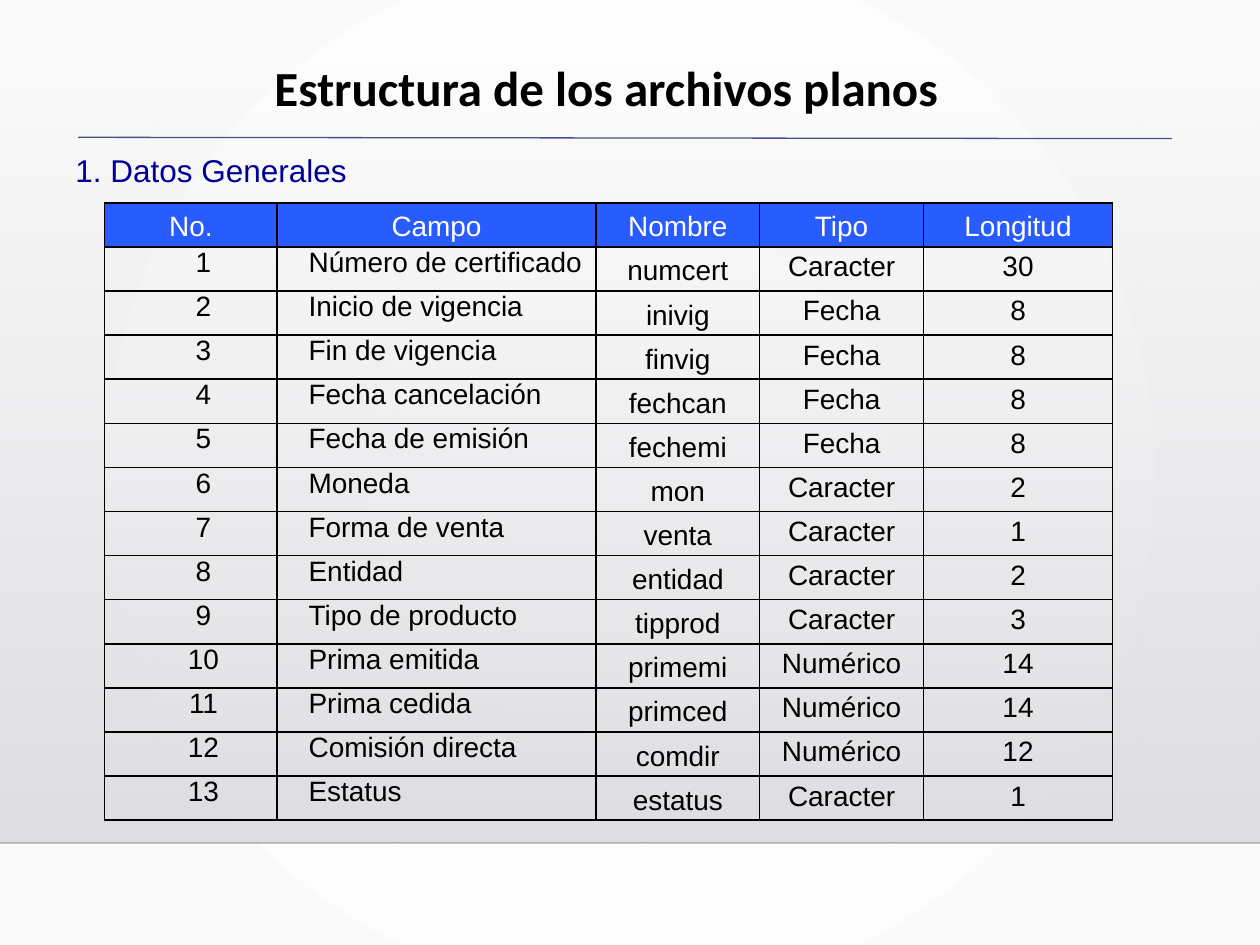
from lxml import etree
from pptx import Presentation
from pptx.dml.color import RGBColor
from pptx.enum.shapes import MSO_CONNECTOR, MSO_SHAPE
from pptx.enum.text import MSO_ANCHOR, MSO_AUTO_SIZE, PP_ALIGN
from pptx.oxml import parse_xml
from pptx.oxml.ns import qn
from pptx.util import Inches, Pt

CENTER, JUSTIFY = PP_ALIGN.CENTER, PP_ALIGN.JUSTIFY
TOP, MIDDLE = MSO_ANCHOR.TOP, MSO_ANCHOR.MIDDLE
RECTANGLE, STRAIGHT = MSO_SHAPE.RECTANGLE, MSO_CONNECTOR.STRAIGHT
FIT_SHAPE = MSO_AUTO_SIZE.SHAPE_TO_FIT_TEXT
NAMESPACE = "http://schemas.openxmlformats.org/drawingml/2006/main"
COLORS = {
    "black": "000000", "white": "FFFFFF", "edge": "FAFAFA",
    "band_top": "DEDEE2", "band_bottom": "DCDCE0", "floor": "000001",
    "rule": "415588", "heading": "000099", "header": "295CFF",
}


def make_gradient(solid_fill, stops, direction):
    """Replace a solid fill by a gradient of (position, colour, opacity) stops."""
    stop_xml = "".join(
        f'<a:gs pos="{position * 1000}"><a:srgbClr val="{COLORS[color]}">'
        f'<a:alpha val="{opacity * 1000}"/></a:srgbClr></a:gs>'
        for position, color, opacity in stops)
    gradient = parse_xml(
        f'<a:gradFill xmlns:a="{NAMESPACE}" rotWithShape="1">'
        f'<a:gsLst>{stop_xml}</a:gsLst>{direction}</a:gradFill>')
    solid_fill.getparent().replace(solid_fill, gradient)


def format_paragraph(paragraph, text, alignment, size, font, color, bold=False):
    paragraph.text = text
    paragraph.alignment = alignment
    values = {"size": Pt(size), "name": font, "bold": bold}
    for name, value in values.items():
        setattr(paragraph.runs[0].font, name, value)
    paragraph.runs[0].font.color.rgb = RGBColor.from_string(COLORS[color])


presentation = Presentation()
presentation.slide_width, presentation.slide_height = Inches(10), Inches(7.5)
slide = presentation.slides.add_slide(presentation.slide_layouts[6])

# Background with a radial gradient
slide.background.fill.solid()
make_gradient(
    next(slide.element.iter(qn("a:solidFill"))),
    [(0, "white", 100), (100, "edge", 100)],
    '<a:path path="circle"><a:fillToRect l="50000" t="50000" r="50000" b="50000"/></a:path>')

# Grey band fading in towards the floor line
band = slide.shapes.add_shape(RECTANGLE, 0, Inches(0.51), Inches(10), Inches(6.18))
band.shadow.inherit = False
band.line.fill.background()
band.fill.solid()
make_gradient(
    next(band.element.iter(qn("a:solidFill"))),
    [(0, "band_top", 0), (100, "band_bottom", 100)],
    '<a:lin ang="5400000" scaled="0"/>')

# Floor line and title rule
for x1, y1, x2, y2, color, width, opacity in [
    (0, 6.69, 10, 6.69, "floor", 1, 20),
    (0.62, 1.09, 9.3, 1.1, "rule", 0.75, 100),
]:
    line = slide.shapes.add_connector(
        STRAIGHT, Inches(x1), Inches(y1), Inches(x2), Inches(y2))
    line.line.color.rgb = RGBColor.from_string(COLORS[color])
    line.line.width = Pt(width)
    if opacity < 100:
        line_color = next(line.element.iter(qn("a:srgbClr")))
        etree.SubElement(line_color, qn("a:alpha"), val=str(opacity * 1000))
    etree.SubElement(line.element.spPr, qn("a:effectLst"))

# Title and section heading
for left, top, width, height, text, alignment, size, font, color, bold in [
    (1.14, 0.41, 7.34, 0.57, "Estructura de los archivos planos",
     CENTER, 28, "Calibri", "black", True),
    (0.5, 1.15, 8.63, 0.4, "1. Datos Generales",
     JUSTIFY, 18, "Arial", "heading", False),
]:
    box = slide.shapes.add_textbox(Inches(left), Inches(top), Inches(width), Inches(height))
    box.text_frame.word_wrap = True
    box.text_frame.auto_size = FIT_SHAPE
    format_paragraph(box.text_frame.paragraphs[0], text, alignment, size, font, color, bold)

# Field table: the first column is numbered by rule
headers = ["No.", "Campo", "Nombre", "Tipo", "Longitud"]
fields = [
    ("Número de certificado", "numcert", "Caracter", 30),
    ("Inicio de vigencia", "inivig", "Fecha", 8),
    ("Fin de vigencia", "finvig", "Fecha", 8),
    ("Fecha cancelación", "fechcan", "Fecha", 8),
    ("Fecha de emisión", "fechemi", "Fecha", 8),
    ("Moneda", "mon", "Caracter", 2),
    ("Forma de venta", "venta", "Caracter", 1),
    ("Entidad", "entidad", "Caracter", 2),
    ("Tipo de producto", "tipprod", "Caracter", 3),
    ("Prima emitida", "primemi", "Numérico", 14),
    ("Prima cedida", "primced", "Numérico", 14),
    ("Comisión directa", "comdir", "Numérico", 12),
    ("Estatus", "estatus", "Caracter", 1),
]
rows = [headers] + [(number, *field) for number, field in enumerate(fields, 1)]
column_widths = [1.37, 2.53, 1.3, 1.3, 1.5]
row_height = 0.35
table = slide.shapes.add_table(
    len(rows), len(headers), Inches(0.83), Inches(1.61),
    Inches(sum(column_widths)), Inches(row_height * len(rows))).table
table.first_row = table.horz_banding = False
for column, width in zip(table.columns, column_widths):
    column.width = Inches(width)
for row in table.rows:
    row.height = Inches(row_height)

# Paragraph formats: header and names, number and field, type and length
plain = {"line_spacing": 1.15}
tight = {"line_spacing": Pt(10.8), "space_after": Pt(2)}
loose = {"line_spacing": 1.15, "space_after": Pt(10)}
body_formats = [tight, tight, plain, loose, loose]
cell_margins = {"margin_left": Inches(0.05), "margin_right": Inches(0.05),
                "margin_top": 0, "margin_bottom": 0}

for row_index, values in enumerate(rows):
    for column_index, value in enumerate(values):
        is_header = row_index == 0
        cell = table.cell(row_index, column_index)
        paragraph = cell.text_frame.paragraphs[0]
        paragraph_format = plain if is_header else body_formats[column_index]
        is_field = column_index == 1 and not is_header
        format_paragraph(paragraph, str(value), JUSTIFY if is_field else CENTER,
                         16, "Arial", "white" if is_header else "black")
        for name, setting in paragraph_format.items():
            setattr(paragraph, name, setting)
        if paragraph_format is tight:
            properties = paragraph._p.get_or_add_pPr()
            properties.set("marL", "0")
            properties.set("indent", str(Inches(0.2)))
        for name, margin in cell_margins.items():
            setattr(cell, name, margin)
        cell.vertical_anchor = TOP if paragraph_format is loose else MIDDLE

        # Black border on every side, then the fill
        cell_properties = cell._tc.get_or_add_tcPr()
        for side in ("lnL", "lnR", "lnT", "lnB"):
            border = etree.SubElement(cell_properties, qn(f"a:{side}"), w=str(Pt(1)))
            border_fill = etree.SubElement(border, qn("a:solidFill"))
            etree.SubElement(border_fill, qn("a:srgbClr"), val=COLORS["black"])
        if is_header:
            cell.fill.solid()
            cell.fill.fore_color.rgb = RGBColor.from_string(COLORS["header"])
        else:
            cell.fill.background()

presentation.save("out.pptx")
